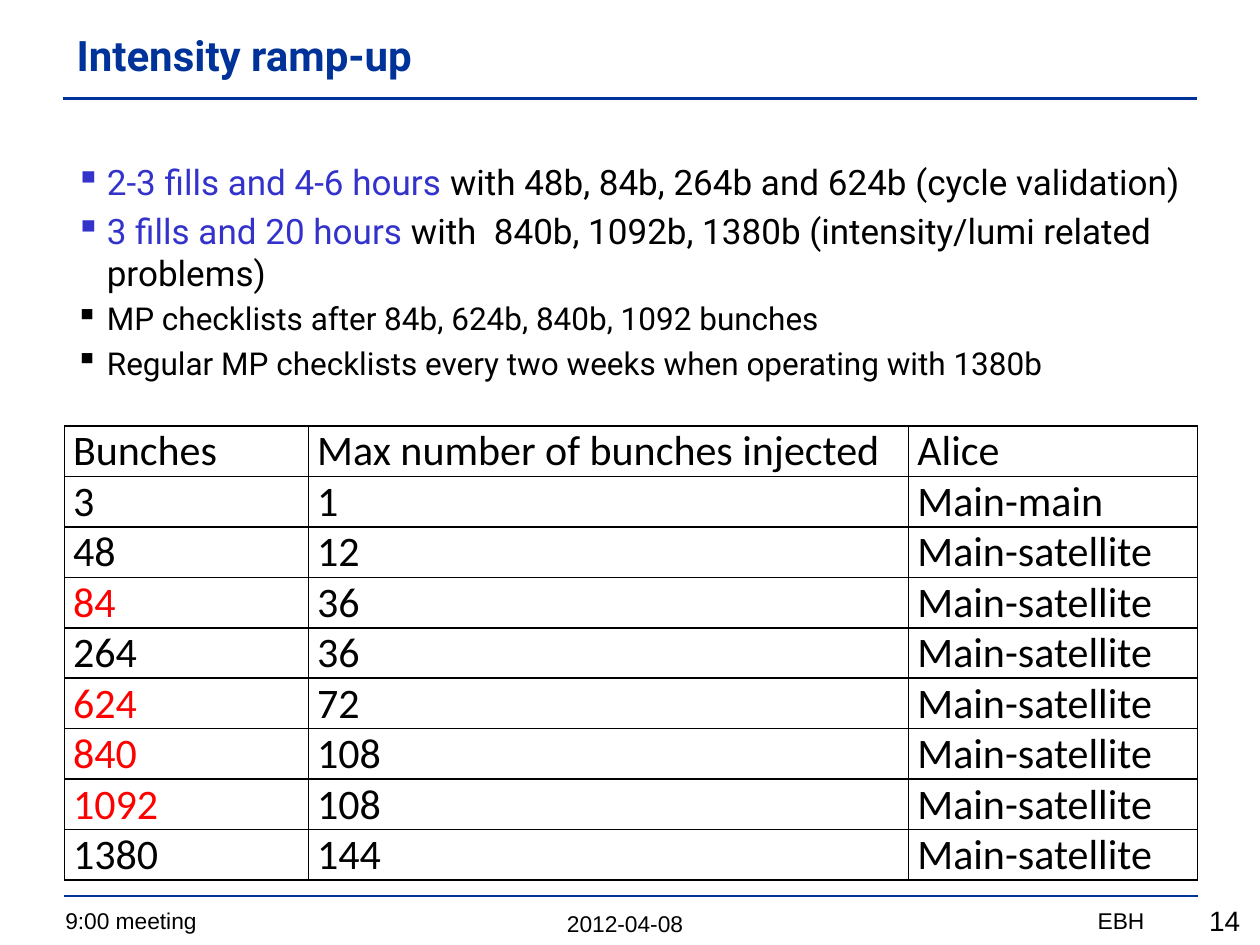
from lxml import etree
from pptx import Presentation
from pptx.dml.color import RGBColor
from pptx.enum.shapes import MSO_CONNECTOR
from pptx.enum.text import MSO_ANCHOR, PP_ALIGN
from pptx.oxml.ns import qn
from pptx.util import Pt

BLACK = RGBColor(0x00, 0x00, 0x00)
NAVY = RGBColor(0x00, 0x33, 0x99)
BLUE = RGBColor(0x33, 0x33, 0xCC)
RED = RGBColor(0xFF, 0x00, 0x00)
LEFT, CENTER, RIGHT = PP_ALIGN.LEFT, PP_ALIGN.CENTER, PP_ALIGN.RIGHT
TOP, MIDDLE = MSO_ANCHOR.TOP, MSO_ANCHOR.MIDDLE
STRAIGHT = MSO_CONNECTOR.STRAIGHT

BULLETS = [
    (20, "2-3 fills and 4-6 hours ",
     "with 48b, 84b, 264b and 624b (cycle validation)"),
    (20, "3 fills and 20 hours ",
     "with  840b, 1092b, 1380b (intensity/lumi related problems)"),
    (18, "", "MP checklists after 84b, 624b, 840b, 1092 bunches"),
    (18, "", "Regular MP checklists every two weeks when operating with 1380b"),
]
HEADS = ("Bunches", "Max number of bunches injected", "Alice")
STEPS = [(3, 1), (48, 12), (84, 36), (264, 36), (624, 72),
         (840, 108), (1092, 108), (1380, 144)]
CHECKED = (84, 624, 840, 1092)
WIDTHS = (139.5, 343, 165)
ROW = 28.8

# left, top, width, height, text, size, alignment
FOOTER = [
    (174.25, 516.25, 365.75, 23, "2012-04-08", 13, CENTER),
    (30.25, 514.8, 266.4, 23, "9:00 meeting", 13, LEFT),
    (450.75, 514.8, 210.25, 23, "EBH", 13, RIGHT),
    (632.9, 512.65, 82.8, 26.65, "14", 16, RIGHT),
]


def style(item, values):
    for name, value in values.items():
        setattr(item, name, value)


def add_run(para, text, size, font, color=BLACK, bold=False):
    run = para.add_run()
    run.text = text
    style(run.font, {"size": Pt(size), "name": font, "bold": bold})
    run.font.color.rgb = color


def add_box(slide, left, top, width, height, anchor=TOP):
    """Add a wrapping text box and return its text frame."""
    box = slide.shapes.add_textbox(Pt(left), Pt(top), Pt(width), Pt(height))
    style(box.text_frame, {"word_wrap": True, "vertical_anchor": anchor})
    return box.text_frame


def add_rule(slide, left, top, width):
    line = slide.shapes.add_connector(
        STRAIGHT, Pt(left), Pt(top), Pt(left + width), Pt(top))
    line.line.color.rgb = NAVY
    line.line.width = Pt(1.5)
    etree.SubElement(line._element.spPr, qn("a:effectLst"))


def add_bullets(slide):
    frame = add_box(slide, 36, 62, 648, 443.5)
    frame.margin_top = Pt(29.5)
    for index, (size, lead, rest) in enumerate(BULLETS):
        para = frame.add_paragraph() if index else frame.paragraphs[0]
        para.space_before = Pt(size * 0.2)
        props = para._p.get_or_add_pPr()
        props.set("marL", str(Pt(18)))
        props.set("indent", str(Pt(-18)))
        etree.SubElement(props, qn("a:buChar"), char="▪")
        if lead:
            add_run(para, lead, size, "Roboto", BLUE)
        add_run(para, rest, size, "Roboto")


def add_border(cell):
    props = cell._tc.get_or_add_tcPr()
    for index, side in enumerate(("lnL", "lnR", "lnT", "lnB")):
        line = etree.Element(qn(f"a:{side}"), w=str(Pt(1)))
        fill = etree.SubElement(line, qn("a:solidFill"))
        etree.SubElement(fill, qn("a:srgbClr"), val=str(BLACK))
        props.insert(index, line)


def add_grid(slide):
    rows = [HEADS]
    for bunch, most in STEPS:
        mode = "Main-main" if bunch == 3 else "Main-satellite"
        rows.append((bunch, most, mode))
    table = slide.shapes.add_table(
        len(rows), len(HEADS), Pt(36.75), Pt(243.4),
        Pt(sum(WIDTHS)), Pt(ROW * len(rows))).table
    style(table, {"first_row": False, "horz_banding": False})
    for col, width in zip(table.columns, WIDTHS):
        col.width = Pt(width)
    for r, values in enumerate(rows):
        table.rows[r].height = Pt(ROW)
        for c, value in enumerate(values):
            cell = table.cell(r, c)
            style(cell, {"margin_left": Pt(5), "margin_right": Pt(5),
                         "margin_top": 0, "margin_bottom": 0})
            cell.fill.background()
            add_border(cell)
            color = RED if c == 0 and value in CHECKED else BLACK
            add_run(cell.text_frame.paragraphs[0], str(value), 24,
                    "Calibri", color)


def add_footer(slide):
    for left, top, width, height, text, size, align in FOOTER:
        para = add_box(slide, left, top, width, height).paragraphs[0]
        para.alignment = align
        add_run(para, text, size, "Arial")


def main():
    deck = Presentation()
    style(deck, {"slide_width": Pt(720), "slide_height": Pt(540)})
    slide = deck.slides.add_slide(deck.slide_layouts[6])
    add_footer(slide)
    add_rule(slide, 36.75, 512, 648)
    add_rule(slide, 36, 56.25, 648)
    add_bullets(slide)
    title = add_box(slide, 36.75, 6.5, 647.25, 49, MIDDLE)
    add_run(title.paragraphs[0], "Intensity ramp-up", 24, "Roboto", NAVY, True)
    add_grid(slide)
    deck.save("out.pptx")


if __name__ == "__main__":
    main()
